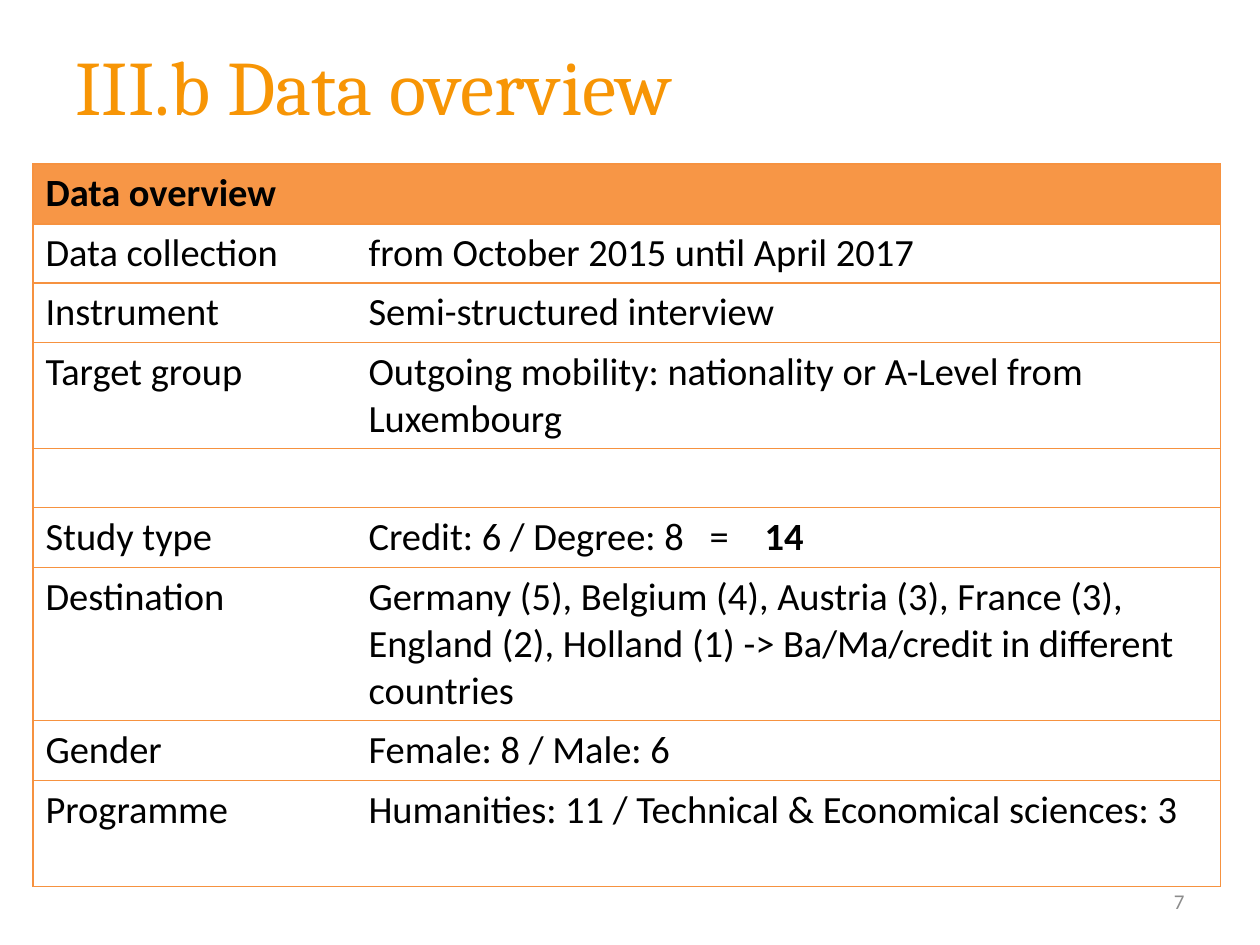
from lxml.etree import SubElement
from pptx import Presentation
from pptx.dml.color import RGBColor
from pptx.enum.text import MSO_ANCHOR, PP_ALIGN
from pptx.oxml.ns import qn
from pptx.util import Pt

PX = 914400 // 126
COLORS = {"title": "F79505", "head": "F79646", "line": "F69240",
          "text": "000000", "page": "8C8C8C"}
WIDTHS = (323, 865)
ROWS = [
    (60, "Data overview", ""),
    (59, "Data collection", "from October 2015 until April 2017"),
    (60, "Instrument", "Semi-structured interview"),
    (106, "Target group",
     "Outgoing mobility: nationality or A-Level from Luxembourg"),
    (59, "", ""),
    (60, "Study type", "Credit: 6 / Degree: 8\t=\t"),
    (153, "Destination",
     "Germany (5), Belgium (4), Austria (3), France (3), "
     "England (2), Holland (1) -> Ba/Ma/credit in different countries"),
    (60, "Gender", "Female: 8 / Male: 6"),
    (106, "Programme", "Humanities: 11 / Technical & Economical sciences: 3"),
]
STUDY = 5
TABS = (341, 396)


def style(font, size, color, name="Calibri", bold=False):
    """Set the look of a font."""
    font.size, font.name, font.bold = Pt(size), name, bold
    font.color.rgb = RGBColor.from_string(COLORS[color])


def add_text(slide, box, text, size, color, name, align):
    """Add a text box with one line, centred in height."""
    frame = slide.shapes.add_textbox(*(n * PX for n in box)).text_frame
    frame.word_wrap = True
    frame.vertical_anchor = MSO_ANCHOR.MIDDLE
    frame.text = text
    para = frame.paragraphs[0]
    para.alignment = align
    style(para.runs[0].font, size, color, name)


def set_edges(cell, sides):
    """Draw the given sides of a cell and hide the others."""
    props = cell._tc.get_or_add_tcPr()
    for side in "LRTB":
        line = SubElement(props, qn(f"a:ln{side}"), w=str(Pt(0.75)))
        if side in sides:
            fill = SubElement(line, qn("a:solidFill"))
            SubElement(fill, qn("a:srgbClr"), val=COLORS["line"])
        else:
            SubElement(line, qn("a:noFill"))


def fill_cell(cell, text, sides, head):
    """Set the text, edges and fill of a cell."""
    para = cell.text_frame.paragraphs[0]
    para.text = text
    style(para.font, 22, "text", bold=head)
    for run in para.runs:
        style(run.font, 22, "text", bold=head)
    set_edges(cell, sides)
    if head:
        cell.fill.solid()
        cell.fill.fore_color.rgb = RGBColor.from_string(COLORS["head"])
    else:
        cell.fill.background()


def add_total(para, text):
    """Append a bold total and line it up on tab stops."""
    run = para.add_run()
    run.text = text
    style(run.font, 22, "text", bold=True)
    stops = SubElement(para._p.get_or_add_pPr(), qn("a:tabLst"))
    for stop in TABS:
        SubElement(stops, qn("a:tab"), pos=str(stop * PX), algn="l")


def add_grid(slide):
    """Add the data table."""
    box = (33, 164, sum(WIDTHS), sum(row[0] for row in ROWS))
    table = slide.shapes.add_table(
        len(ROWS), len(WIDTHS), *(n * PX for n in box)).table
    for col, width in zip(table.columns, WIDTHS):
        col.width = width * PX
    for i, (height, *texts) in enumerate(ROWS):
        table.rows[i].height = height * PX
        for j, text in enumerate(texts):
            sides = "LRTB" if i == 0 else ("LTB", "RTB")[j]
            fill_cell(table.cell(i, j), text, sides, i == 0)
    table.cell(0, 0).merge(table.cell(0, 1))
    add_total(table.cell(STUDY, 1).text_frame.paragraphs[0], "14")


def main():
    """Build and save the slide."""
    deck = Presentation()
    deck.slide_width, deck.slide_height = 1260 * PX, 945 * PX
    slide = deck.slides.add_slide(deck.slide_layouts[6])
    add_text(slide, (63, 6, 1197, 158), "III.b Data overview",
             44, "title", "Cambria", PP_ALIGN.LEFT)
    add_text(slide, (903, 876, 294, 50), "7",
             12, "page", "Calibri", PP_ALIGN.RIGHT)
    add_grid(slide)
    deck.save("out.pptx")


if __name__ == "__main__":
    main()
